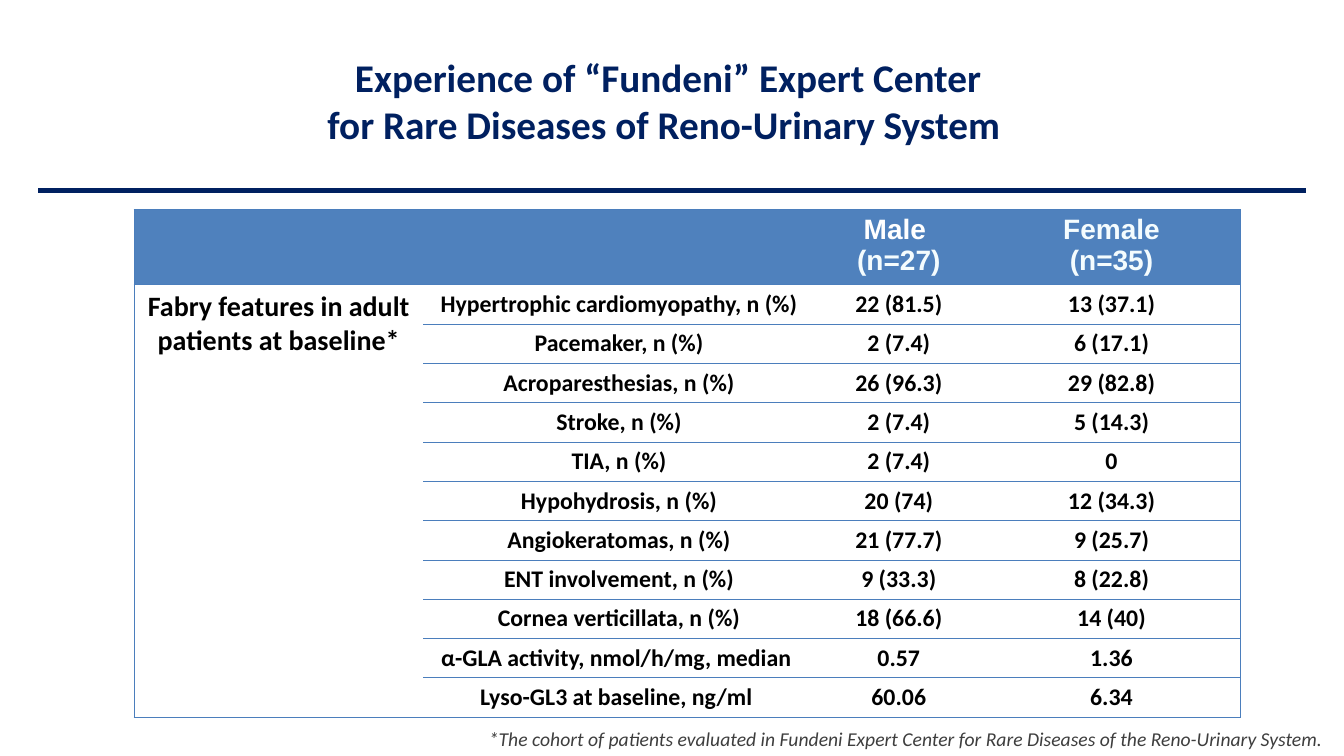
"""Build the slide on Fabry features in adult patients at baseline."""
from lxml import etree
from pptx import Presentation
from pptx import util as u
from pptx.dml.color import RGBColor
from pptx.enum import shapes, text
from pptx.oxml import ns

NAVY = RGBColor(0x00, 0x20, 0x60)
BLUE = RGBColor(0x4F, 0x81, 0xBD)
BORDER = RGBColor(0x4B, 0x7E, 0xBC)
WHITE = RGBColor(0xFF, 0xFF, 0xFF)
ICE = RGBColor(0xF4, 0xFC, 0xFE)
BLACK = RGBColor(0x00, 0x00, 0x00)
GRAY = RGBColor(0x3E, 0x3E, 0x3E)

TITLE = ["Experience of “Fundeni” Expert Center",
         "for Rare Diseases of Reno-Urinary System "]
GROUPS = [(["Male ", "(n=27)"], [WHITE, ICE]),
          (["Female", "(n=35)"], [ICE, ICE])]
TOPIC = "Fabry features in adult patients at baseline*"
FEATURES = [
    ("Hypertrophic cardiomyopathy, n (%)", "22 (81.5)", "13 (37.1)"),
    ("Pacemaker, n (%)", "2 (7.4)", "6 (17.1)"),
    ("Acroparesthesias, n (%)", "26 (96.3)", "29 (82.8)"),
    ("Stroke, n (%)", "2 (7.4)", "5 (14.3)"),
    ("TIA, n (%)", "2 (7.4)", "0"),
    ("Hypohydrosis, n (%)", "20 (74)", "12 (34.3)"),
    ("Angiokeratomas, n (%)", "21 (77.7)", "9 (25.7)"),
    ("ENT involvement, n (%)", "9 (33.3)", "8 (22.8)"),
    ("Cornea verticillata, n (%)", "18 (66.6)", "14 (40)"),
    ("α-GLA activity, nmol/h/mg, median ", "0.57", "1.36"),
    ("Lyso-GL3 at baseline, ng/ml ", "60.06", "6.34"),
]
FOOTNOTE = ("*The cohort of patients evaluated in Fundeni Expert Center "
            "for Rare Diseases of the Reno-Urinary System.")
COLUMN_WIDTHS = [2.87, 3.88, 1.67, 2.55]
HEADER_HEIGHT, ROW_HEIGHT = 0.72, 0.39


def write(frame, lines, size, colors, font="Calibri", bold=True, italic=False,
          align=text.PP_ALIGN.CENTER):
    """Fill a text frame with one paragraph per line."""
    frame.word_wrap = True
    for index, (line, color) in enumerate(zip(lines, colors)):
        paragraph = frame.paragraphs[0] if index == 0 else frame.add_paragraph()
        paragraph.alignment = align
        run = paragraph.add_run()
        run.text = line
        run.font.name = font
        run.font.size = u.Pt(size)
        run.font.bold = bold
        run.font.italic = italic
        run.font.color.rgb = color


def style_cell(cell, fill, edges):
    """Draw the named cell edges, clear the others and fill the cell."""
    properties = cell._tc.get_or_add_tcPr()
    for edge in ("L", "R", "T", "B"):
        line = etree.SubElement(properties, ns.qn(f"a:ln{edge}"), w=str(u.Pt(0.75)))
        if edge in edges:
            solid = etree.SubElement(line, ns.qn("a:solidFill"))
            etree.SubElement(solid, ns.qn("a:srgbClr"), val=str(BORDER))
        else:
            etree.SubElement(line, ns.qn("a:noFill"))
    cell.fill.solid()
    cell.fill.fore_color.rgb = fill


def add_textbox(slide, left, top, width, height):
    """Add a text box and return its text frame."""
    return slide.shapes.add_textbox(*map(u.Inches, (left, top, width, height))).text_frame


def add_features_table(slide):
    """Add the table of features by sex."""
    row_count, column_count = len(FEATURES) + 1, len(COLUMN_WIDTHS)
    height = HEADER_HEIGHT + ROW_HEIGHT * len(FEATURES)
    table = slide.shapes.add_table(
        row_count, column_count, u.Inches(1.33), u.Inches(2.08),
        u.Inches(sum(COLUMN_WIDTHS)), u.Inches(height)).table
    table.first_row = table.horz_banding = False
    for column, width in zip(table.columns, COLUMN_WIDTHS):
        column.width = u.Inches(width)
    for index, row in enumerate(table.rows):
        row.height = u.Inches(ROW_HEIGHT if index else HEADER_HEIGHT)
        for position, cell in enumerate(row.cells):
            edges = "TB" if position and index else "T" if index < 2 else ""
            if position == 0:
                edges += "L"
                if index in (1, row_count - 1):
                    edges += "B"
            if position == column_count - 1:
                edges += "R"
            style_cell(cell, WHITE if index else BLUE, edges)
            if index == 0:
                cell.margin_top = cell.margin_bottom = u.Inches(0.04)
    table.cell(1, 0).merge(table.cell(row_count - 1, 0))
    write(table.cell(1, 0).text_frame, [TOPIC], 20, [BLACK])
    for position, (lines, colors) in enumerate(GROUPS, start=2):
        write(table.cell(0, position).text_frame, lines, 20, colors, font="Arial")
    for index, feature in enumerate(FEATURES, start=1):
        for position, value in enumerate(feature, start=1):
            write(table.cell(index, position).text_frame, [value], 17, [BLACK])


def main():
    """Assemble and save the slide."""
    presentation = Presentation()
    presentation.slide_width = u.Inches(13.33)
    presentation.slide_height = u.Inches(7.5)
    slide = presentation.slides.add_slide(presentation.slide_layouts[6])

    rule = slide.shapes.add_connector(
        shapes.MSO_CONNECTOR.STRAIGHT,
        u.Inches(0.38), u.Inches(1.89), u.Inches(12.95), u.Inches(1.89))
    rule.line.color.rgb = NAVY
    rule.line.width = u.Pt(3.5)
    etree.SubElement(rule._element.spPr, ns.qn("a:effectLst"))

    title = add_textbox(slide, 1.65, 0.15, 9.95, 1.69)
    title.vertical_anchor = text.MSO_ANCHOR.MIDDLE
    write(title, TITLE, 28, [NAVY, NAVY])

    add_features_table(slide)

    footnote = add_textbox(slide, 4.75, 7.16, 8.58, 0.34)
    write(footnote, [FOOTNOTE], 14, [GRAY], bold=False, italic=True,
          align=text.PP_ALIGN.LEFT)
    indent = footnote.paragraphs[0]._p.get_or_add_pPr()
    indent.set("marL", str(u.Inches(0.05)))
    indent.set("indent", str(u.Inches(-0.05)))

    presentation.save("out.pptx")


if __name__ == "__main__":
    main()
